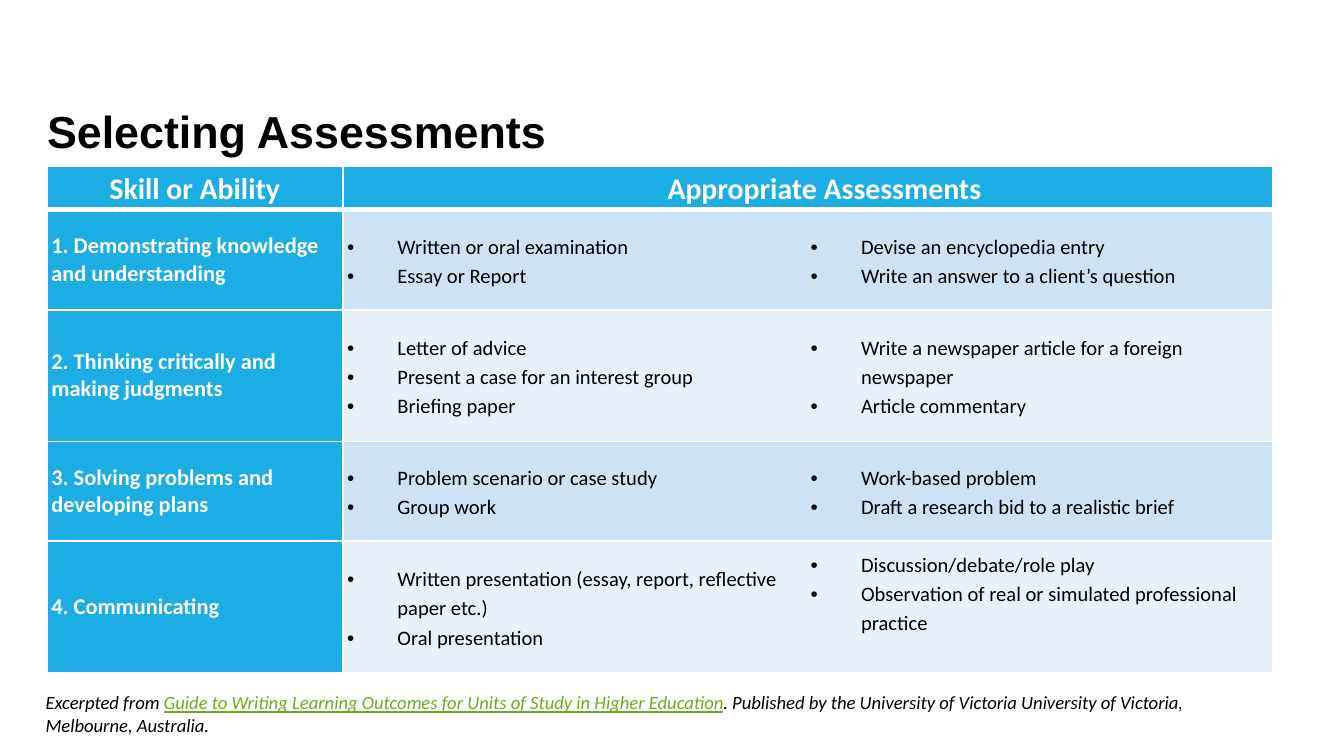
from lxml.etree import SubElement
from pptx import Presentation
from pptx.dml.color import RGBColor
from pptx.enum.text import MSO_ANCHOR, MSO_AUTO_SIZE, PP_ALIGN
from pptx.oxml.ns import qn
from pptx.util import Pt

COLORS = {
    "black": "000000",
    "white": "FFFFFF",
    "blue": "1CADE4",
    "band_dark": "CDE3F5",
    "band_light": "E8F1FA",
    "link": "6EAC1C",
}

HEADINGS = ["Skill or Ability", "Appropriate Assessments"]
SKILLS = [
    ("1. Demonstrating knowledge and understanding",
     ["Written or oral examination", "Essay or Report"],
     ["Devise an encyclopedia entry", "Write an answer to a client’s question"]),
    ("2. Thinking critically and making judgments",
     ["Letter of advice", "Present a case for an interest group", "Briefing paper"],
     ["Write a newspaper article for a foreign newspaper", "Article commentary"]),
    ("3. Solving problems and developing plans",
     ["Problem scenario or case study", "Group work"],
     ["Work-based problem", "Draft a research bid to a realistic brief"]),
    ("4. Communicating",
     ["Written presentation (essay, report, reflective paper etc.)", "Oral presentation"],
     ["Discussion/debate/role play",
      "Observation of real or simulated professional practice"]),
]


def add_run(paragraph, text, size, color, font="Calibri", bold=False, italic=False):
    run = paragraph.add_run()
    run.text = text
    run.font.name = font
    run.font.size = Pt(size)
    run.font.bold = bold
    run.font.italic = italic
    run.font.color.rgb = RGBColor.from_string(COLORS[color])
    return run


def style_cell(cell, fill, anchor, bottom_width=1, hidden_side=None):
    cell.margin_left = cell.margin_right = Pt(2.3)
    cell.margin_top = cell.margin_bottom = 0
    cell.vertical_anchor = anchor
    properties = cell._tc.get_or_add_tcPr()
    for side in ("lnL", "lnR", "lnT", "lnB"):
        width = bottom_width if side == "lnB" else 1
        border = SubElement(properties, qn(f"a:{side}"), w=str(Pt(width)))
        if side == hidden_side:
            SubElement(border, qn("a:noFill"))
        else:
            solid = SubElement(border, qn("a:solidFill"))
            SubElement(solid, qn("a:srgbClr"), val=COLORS["white"])
    cell.fill.solid()
    cell.fill.fore_color.rgb = RGBColor.from_string(COLORS[fill])


presentation = Presentation()
presentation.slide_width = Pt(720)
presentation.slide_height = Pt(405)
slide = presentation.slides.add_slide(presentation.slide_layouts[5])

# Title
title = slide.shapes.title
title.left, title.top, title.width, title.height = Pt(25.2), Pt(59), Pt(670), Pt(78.5)
title_frame = title.text_frame
title_frame.margin_left = title_frame.margin_right = 0
title_frame.margin_top = title_frame.margin_bottom = 0
title_frame.vertical_anchor = MSO_ANCHOR.TOP
title_frame.auto_size = MSO_AUTO_SIZE.NONE
heading = title_frame.paragraphs[0]
heading.alignment = PP_ALIGN.LEFT
heading.line_spacing = 0.9
add_run(heading, "Selecting Assessments", 24, "black", font="Arial", bold=True)

# Table grid
column_widths = [158.4, 248.4, 249.8]
row_heights = [23.6, 53.5, 70.5, 53.5, 70.5]
table = slide.shapes.add_table(
    len(row_heights), len(column_widths), Pt(25.2), Pt(88.9),
    Pt(sum(column_widths)), Pt(sum(row_heights))).table
for column, width in zip(table.columns, column_widths):
    column.width = Pt(width)
for row, height in zip(table.rows, row_heights):
    row.height = Pt(height)

# Header row
table.cell(0, 1).merge(table.cell(0, 2))
for cell in table.rows[0].cells:
    style_cell(cell, "blue", MSO_ANCHOR.TOP, bottom_width=3)
for column_index, text in enumerate(HEADINGS):
    paragraph = table.cell(0, column_index).text_frame.paragraphs[0]
    paragraph.alignment = PP_ALIGN.CENTER
    paragraph.line_spacing = 1.15
    if column_index == 1:
        paragraph._p.get_or_add_pPr().set("marL", str(Pt(18)))
    add_run(paragraph, text, 16, "white", bold=True)

# Skills and their assessments
for row_index, (skill, *assessments) in enumerate(SKILLS, start=1):
    skill_cell = table.cell(row_index, 0)
    style_cell(skill_cell, "blue", MSO_ANCHOR.MIDDLE)
    add_run(skill_cell.text_frame.paragraphs[0], skill, 12, "white", bold=True)

    band = "band_dark" if row_index % 2 else "band_light"
    for column_index, items in enumerate(assessments, start=1):
        cell = table.cell(row_index, column_index)
        style_cell(cell, band, MSO_ANCHOR.MIDDLE,
                   hidden_side="lnR" if column_index == 1 else "lnL")
        for item_index, item in enumerate(items):
            frame = cell.text_frame
            paragraph = frame.add_paragraph() if item_index else frame.paragraphs[0]
            paragraph.line_spacing = 1.15
            bullet_properties = paragraph._p.get_or_add_pPr()
            bullet_properties.set("marL", str(Pt(27)))
            bullet_properties.set("indent", str(Pt(-27)))
            SubElement(bullet_properties, qn("a:buFont"), typeface="Arial")
            SubElement(bullet_properties, qn("a:buChar"), char="•")
            add_run(paragraph, item, 11, "black")

# The last list sits one line higher than its neighbour
table.cell(4, 2).margin_bottom = Pt(15.4)

# Source note
note = slide.shapes.add_textbox(Pt(17.3), Pt(366.5), Pt(647.3), Pt(31.7))
note.text_frame.word_wrap = True
note.text_frame.vertical_anchor = MSO_ANCHOR.MIDDLE
note.text_frame.auto_size = MSO_AUTO_SIZE.SHAPE_TO_FIT_TEXT
credit = note.text_frame.paragraphs[0]
add_run(credit, "Excerpted from ", 10, "black", italic=True)
guide = add_run(
    credit, "Guide to Writing Learning Outcomes for Units of Study in Higher Education",
    10, "link", italic=True)
guide.font.underline = True
add_run(credit, ". Published by the University of Victoria University of Victoria, "
        "Melbourne, Australia.", 10, "black", italic=True)

presentation.save("out.pptx")
